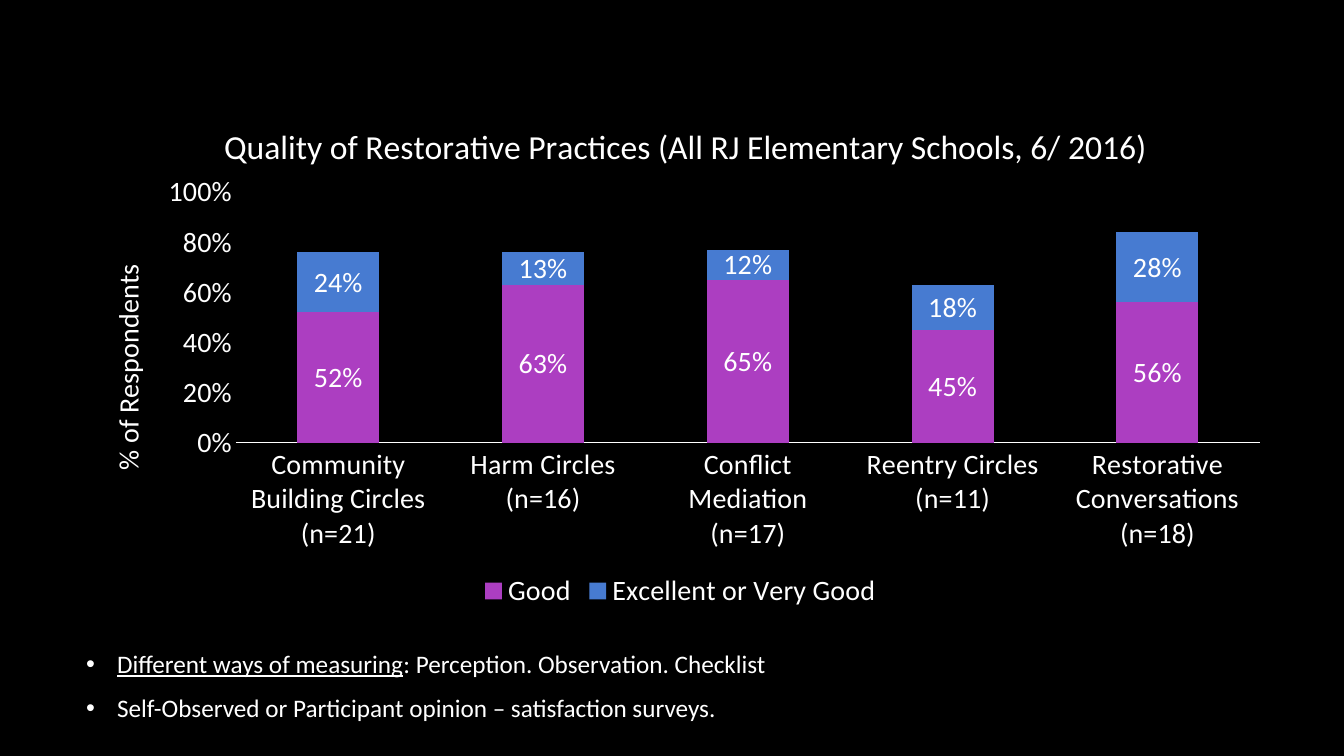
from dataclasses import dataclass

from lxml.etree import SubElement
from pptx import Presentation
from pptx.chart.data import CategoryChartData
from pptx.dml.color import RGBColor
from pptx.enum.chart import XL_CHART_TYPE as ChartType
from pptx.enum.chart import XL_LABEL_POSITION as LabelPosition
from pptx.enum.chart import XL_LEGEND_POSITION as LegendPosition
from pptx.enum.chart import XL_TICK_MARK as TickMark
from pptx.enum.text import MSO_ANCHOR as Anchor
from pptx.enum.text import MSO_AUTO_SIZE as AutoSize
from pptx.oxml import parse_xml
from pptx.oxml.ns import nsdecls, qn
from pptx.util import Pt

PX = 914400 / 100.8


def px(length):
    return round(length * PX)


@dataclass(frozen=True)
class Theme:
    face: str = "Calibri"
    ground: str = "000000"
    ink: str = "FFFFFF"
    good: str = "AC3EC1"
    excellent: str = "477BD1"
    title: int = 24
    label: int = 20
    body: int = 18


THEME = Theme()

CATEGORIES = [
    "Community Building Circles (n=21)",
    "Harm Circles (n=16)",
    "Conflict Mediation (n=17)",
    "Reentry Circles (n=11)",
    "Restorative Conversations (n=18)",
]
SERIES = [
    ("Good", THEME.good, (0.52, 0.63, 0.65, 0.45, 0.56)),
    ("Excellent or Very Good", THEME.excellent, (0.24, 0.13, 0.12, 0.18, 0.28)),
]
BULLETS = [
    ("Different ways of measuring", ": Perception. Observation. Checklist"),
    ("", "Self-Observed or Participant opinion – satisfaction surveys."),
]


def paint(fill, color):
    fill.solid()
    fill.fore_color.rgb = RGBColor.from_string(color)


def style_font(font, size):
    font.name = THEME.face
    font.size = Pt(size)
    font.bold = False
    font.color.rgb = RGBColor.from_string(THEME.ink)


def write_title(frame, text, size):
    para = frame.paragraphs[0]
    para.add_run().text = text
    style_font(para.font, size)


def pin(element, index, box, places):
    """Fix a chart part at places, in px of the chart's own box."""
    for old in element.findall(qn("c:layout")):
        element.remove(old)
    layout = parse_xml(f"<c:layout {nsdecls('c')}/>")
    manual = SubElement(layout, qn("c:manualLayout"))
    if "w" in places:
        SubElement(manual, qn("c:layoutTarget")).set("val", "inner")
    for side in ("x", "y"):
        SubElement(manual, qn(f"c:{side}Mode")).set("val", "edge")
    extents = {"x": box[2], "y": box[3], "w": box[2], "h": box[3]}
    for side, length in places.items():
        share = round(length / extents[side], 4)
        SubElement(manual, qn(f"c:{side}")).set("val", str(share))
    element.insert(index, layout)


def style_axes(chart):
    groups, shares = chart.category_axis, chart.value_axis
    for axis in (groups, shares):
        axis.major_tick_mark = axis.minor_tick_mark = TickMark.NONE
        axis.has_major_gridlines = False
        style_font(axis.tick_labels.font, THEME.label)
    paint(groups.format.line.fill, THEME.ink)
    groups.format.line.width = Pt(0.75)
    shares.format.line.fill.background()
    shares.minimum_scale, shares.maximum_scale = 0, 1
    shares.major_unit = 0.2
    shares.tick_labels.number_format = "0%"
    shares.tick_labels.number_format_is_linked = False
    write_title(shares.axis_title.text_frame, "% of Respondents", THEME.label)


def style_series(plot):
    plot.gap_width, plot.overlap = 150, 100
    plot.vary_by_categories = False
    for series, (_, color, _) in zip(plot.series, SERIES):
        paint(series.format.fill, color)
        labels = series.data_labels
        labels.show_value = True
        labels.position = LabelPosition.CENTER
        labels.number_format = "0%"
        labels.number_format_is_linked = False
        style_font(labels.font, THEME.label)


def add_quality_chart(page, box):
    data = CategoryChartData(number_format="0%")
    data.categories = CATEGORIES
    for name, _, values in SERIES:
        data.add_series(name, values)
    frame = page.shapes.add_chart(ChartType.COLUMN_STACKED, *map(px, box), data)
    chart = frame.chart
    style_font(chart.font, THEME.label)
    write_title(
        chart.chart_title.text_frame,
        "Quality of Restorative Practices (All RJ Elementary Schools, 6/ 2016)",
        THEME.title,
    )
    chart.has_legend = True
    chart.legend.position = LegendPosition.BOTTOM
    chart.legend.include_in_layout = False
    style_font(chart.legend.font, THEME.label)
    style_axes(chart)
    style_series(chart.plots[0])

    plot_area = chart.plots[0]._element.getparent()
    pin(plot_area, 0, box, {"x": 160, "y": 95, "w": 1024, "h": 251})
    pin(chart.chart_title._element, 1, box, {"x": 142, "y": 21})
    pin(chart.value_axis.axis_title._element, 1, box, {"x": 27, "y": 162})


def add_bullet(para, indent):
    props = para._p.get_or_add_pPr()
    props.set("marL", str(px(indent)))
    props.set("indent", str(-px(indent)))
    color = SubElement(props, qn("a:buClr"))
    SubElement(color, qn("a:srgbClr")).set("val", THEME.ink)
    SubElement(props, qn("a:buFont")).set("typeface", "Arial")
    SubElement(props, qn("a:buChar")).set("char", "•")


def fill_notes_list(body, box):
    body.left, body.top, body.width, body.height = map(px, box)
    frame = body.text_frame
    frame.word_wrap = True
    frame.auto_size = AutoSize.NONE
    frame.vertical_anchor = Anchor.MIDDLE
    for number, (lead, rest) in enumerate(BULLETS):
        para = frame.add_paragraph() if number else frame.paragraphs[0]
        para.space_before, para.space_after = Pt(0), Pt(10)
        add_bullet(para, 31)
        style_font(para.font, THEME.body)
        if lead:
            span = para.add_run()
            span.text = lead
            span.font.underline = True
        para.add_run().text = rest


def build_survey_page(deck):
    page = deck.slides.add_slide(deck.slide_layouts[1])
    paint(page.background.fill, THEME.ground)
    heading = page.shapes.title._element
    heading.getparent().remove(heading)
    fill_notes_list(page.placeholders[1], (76, 615, 1149, 141))
    add_quality_chart(page, (76, 97, 1209, 517))


def main():
    deck = Presentation()
    deck.slide_width, deck.slide_height = px(1344), px(756)
    build_survey_page(deck)
    deck.save("out.pptx")


if __name__ == "__main__":
    main()
